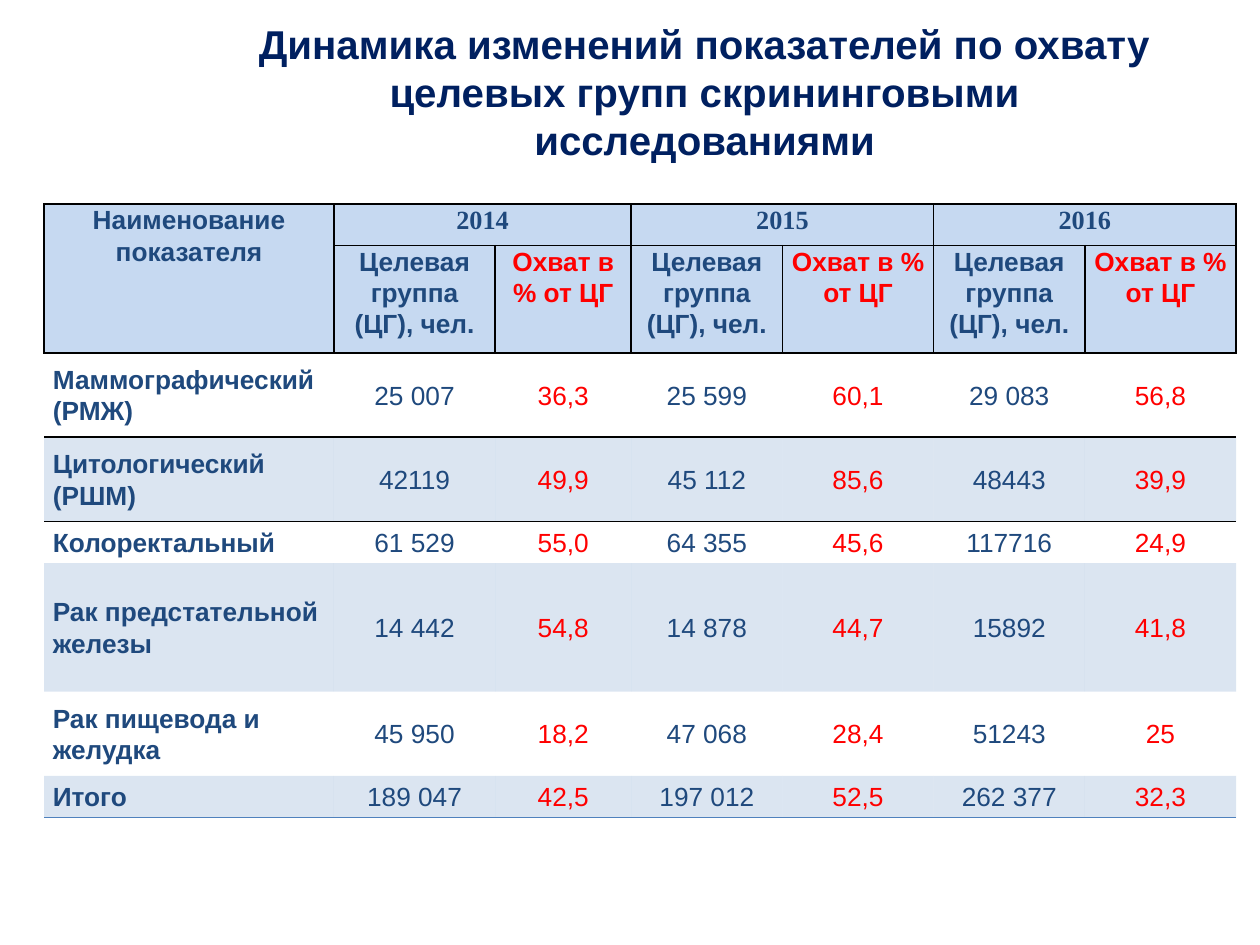
from lxml.etree import SubElement
from pptx import Presentation
from pptx.dml.color import RGBColor
from pptx.enum.text import MSO_ANCHOR, PP_ALIGN
from pptx.oxml.ns import qn
from pptx.util import Inches, Pt

COLORS = {"title": "002060", "text": "1F497D", "coverage": "FF0000",
          "header": "C6D9F1", "accent": "4F81BD", "line": "000000"}
NO_STYLE = "{2D5ABB26-0587-4C30-8999-92F81FD0307C}"
COLUMNS = [2.3, 1.28, 1.08, 1.2, 1.2, 1.2, 1.2]
HEIGHTS = [0.33, 0.85, 0.67, 0.67, 0.33, 1.02, 0.67, 0.33]
YEARS = ["2014", "2015", "2016"]
MEASURES = ["Целевая группа (ЦГ), чел.", "Охват в % от ЦГ"]
SCREENINGS = [
    ["Маммографический (РМЖ)", "25 007", "36,3", "25 599", "60,1", "29 083", "56,8"],
    ["Цитологический (РШМ)", "42119", "49,9", "45 112", "85,6", "48443", "39,9"],
    ["Колоректальный", "61 529", "55,0", "64 355", "45,6", "117716", "24,9"],
    ["Рак предстательной железы", "14 442", "54,8", "14 878", "44,7", "15892", "41,8"],
    ["Рак пищевода и желудка", "45 950", "18,2", "47 068", "28,4", "51243", "25"],
    ["Итого", "189 047", "42,5", "197 012", "52,5", "262 377", "32,3"],
]


def add_run(p, text, size, color, bold=True, font="Arial"):
    """Add one formatted run to a paragraph."""
    r = p.add_run()
    r.text = text
    r.font.size, r.font.bold, r.font.name = Pt(size), bold, font
    r.font.color.rgb = RGBColor.from_string(COLORS[color])


def add_title(s, text):
    """Add the centred slide title."""
    tf = s.shapes.add_textbox(Inches(1.69), Inches(0.3), Inches(7.81), Inches(0.85)).text_frame
    tf.word_wrap = True
    tf.vertical_anchor = MSO_ANCHOR.MIDDLE
    tf.paragraphs[0].alignment = PP_ALIGN.CENTER
    add_run(tf.paragraphs[0], text, 23, "title")


def set_borders(cell, sides, color):
    """Draw one-point lines on the given sides of a cell, in L, R, T, B order."""
    for side in sides:
        ln = SubElement(cell._tc.get_or_add_tcPr(), qn(f"a:ln{side}"), w=str(Pt(1)))
        SubElement(SubElement(ln, qn("a:solidFill")), qn("a:srgbClr"), val=COLORS[color])


def set_fill(cell, color, opacity=100):
    """Fill a cell with a colour of the given opacity in percent."""
    cell.fill.solid()
    cell.fill.fore_color.rgb = RGBColor.from_string(COLORS[color])
    if opacity < 100:
        clr = cell._tc.tcPr.find(f"{qn('a:solidFill')}/{qn('a:srgbClr')}")
        SubElement(clr, qn("a:alpha"), val=str(opacity * 1000))


def write_cell(cell, text, color, bold=True, font="Arial",
               align=PP_ALIGN.CENTER, anchor=MSO_ANCHOR.TOP):
    """Write the text of a cell with the table's margins and spacing."""
    cell.margin_left = cell.margin_right = Inches(0.07)
    cell.margin_top = cell.margin_bottom = 0
    cell.vertical_anchor = anchor
    p = cell.text_frame.paragraphs[0]
    p.alignment, p.line_spacing = align, 1.07
    add_run(p, text, 15, color, bold, font)


def column_color(col):
    """Return the text colour of a column."""
    return "coverage" if col and col % 2 == 0 else "text"


def fill_header(table):
    """Fill the two header rows with merged year and name cells."""
    for row in range(2):
        for col in range(len(COLUMNS)):
            set_borders(table.cell(row, col), "LRTB", "line")
            set_fill(table.cell(row, col), "header")
    table.cell(0, 0).merge(table.cell(1, 0))
    write_cell(table.cell(0, 0), "Наименование показателя", "text")
    for i, year in enumerate(YEARS):
        first = 1 + 2 * i
        table.cell(0, first).merge(table.cell(0, first + 1))
        write_cell(table.cell(0, first), year, "text", font="Times New Roman")
        for col, measure in enumerate(MEASURES, first):
            write_cell(table.cell(1, col), measure, column_color(col))


def fill_body(table):
    """Fill the screening rows, shading every second one."""
    last = len(SCREENINGS) - 1
    for i, values in enumerate(SCREENINGS):
        for col, value in enumerate(values):
            cell = table.cell(i + 2, col)
            if i == 0:
                set_borders(cell, "TB", "line")
            elif i == 1:
                set_borders(cell, "T", "line")
            elif i == last:
                set_borders(cell, "B", "accent")
            if i % 2:
                set_fill(cell, "accent", 20)
            else:
                cell.fill.background()
            write_cell(cell, value, column_color(col), bold=col == 0,
                       align=PP_ALIGN.CENTER if col else PP_ALIGN.LEFT,
                       anchor=MSO_ANCHOR.MIDDLE)


def add_screening_table(s):
    """Add the table of target groups and coverage by year."""
    table = s.shapes.add_table(len(HEIGHTS), len(COLUMNS), Inches(0.35), Inches(1.62),
                               Inches(sum(COLUMNS)), Inches(sum(HEIGHTS))).table
    table._tbl.tblPr.find(qn("a:tableStyleId")).text = NO_STYLE
    for column, width in zip(table.columns, COLUMNS):
        column.width = Inches(width)
    for row, height in zip(table.rows, HEIGHTS):
        row.height = Inches(height)
    fill_header(table)
    fill_body(table)


def main():
    """Build and save the slide."""
    prs = Presentation()
    prs.slide_width, prs.slide_height = Inches(10), Inches(7.5)
    s = prs.slides.add_slide(prs.slide_layouts[6])
    add_title(s, "Динамика изменений показателей по охвату "
                 "целевых групп скрининговыми исследованиями")
    add_screening_table(s)
    prs.save("out.pptx")


if __name__ == "__main__":
    main()
